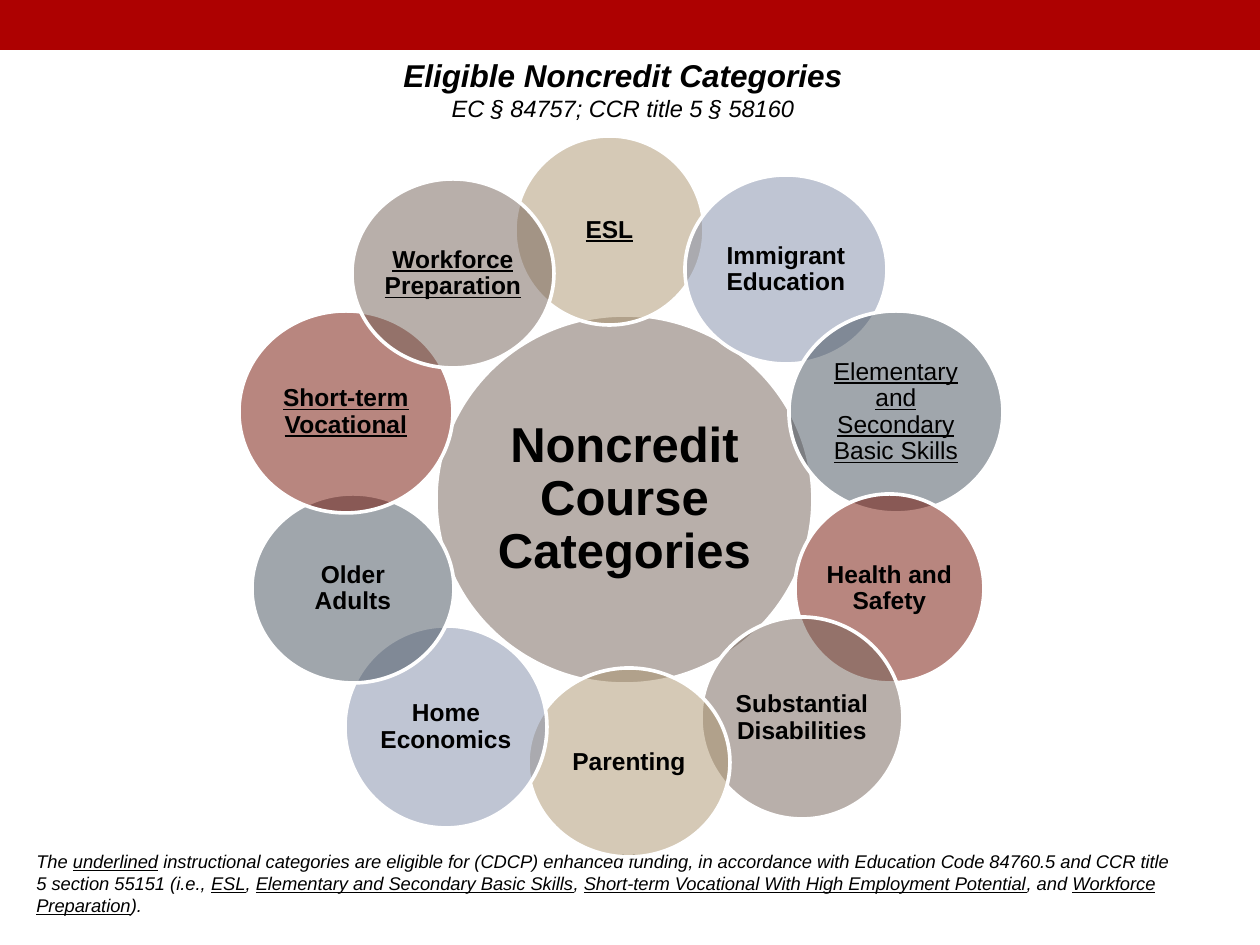
import itertools
from dataclasses import dataclass

import pptx
import pptx.dml.color
import pptx.enum.shapes
import pptx.enum.text
import pptx.oxml.ns
import pptx.util
from lxml import etree

DPI = 126
Kind = pptx.enum.shapes.MSO_SHAPE
Align = pptx.enum.text.PP_ALIGN
Anchor = pptx.enum.text.MSO_ANCHOR
Fit = pptx.enum.text.MSO_AUTO_SIZE


@dataclass(frozen=True)
class Theme:
    font: str = "Arial"
    ink: str = "000000"
    edge: str = "FFFFFF"
    band: str = "AD0101"
    hub: str = "726056"
    # Petal fills, repeated clockwise from the top
    cycle: tuple = ("AC956E", "808DA9", "424E5B", "730E00", "726056")
    alpha: int = 50
    rim: float = 2.08
    title: float = 18
    sub: float = 13.5
    core: float = 28
    label: float = 14
    note: float = 10.5


@dataclass(frozen=True)
class Disc:
    text: str  # words between underscores are underlined
    x: int
    y: int
    w: int
    h: int
    bold: bool = True


THEME = Theme()

CORE = Disc("Noncredit Course Categories", 436, 315, 377, 369)

PETALS = (
    Disc("_ESL_", 515, 136, 189, 189),
    Disc("Immigrant Education", 685, 175, 202, 189),
    Disc("_Elementary and Secondary Basic Skills_", 789, 311, 214, 202, False),
    Disc("Health and Safety", 795, 494, 189, 189),
    Disc("Substantial Disabilities", 701, 617, 202, 202),
    Disc("Parenting", 528, 668, 202, 189),
    Disc("Home Economics", 345, 626, 202, 202),
    Disc("Older Adults", 252, 494, 202, 189),
    Disc("_Short-term Vocational_", 239, 311, 214, 202),
    Disc("_Workforce_ _Preparation_", 352, 179, 202, 189),
)

NOTE = (
    "The _underlined_ instructional categories are eligible for (CDCP) "
    "enhanced funding, in accordance with Education Code 84760.5 and CCR "
    "title 5 section 55151 (i.e., _ESL_, _Elementary and Secondary Basic "
    "Skills_, _Short-term Vocational With High Employment Potential_, and "
    "_Workforce Preparation_)."
)


def px(n: int) -> pptx.util.Emu:
    return pptx.util.Emu(round(n * 914400 / DPI))


def rgb(code: str) -> pptx.dml.color.RGBColor:
    return pptx.dml.color.RGBColor.from_string(code)


def write(frame, text: str, *, size: float, bold: bool = False,
          slant: bool = False, align=Align.LEFT, lead: float = 1.0) -> None:
    """Add one paragraph; underscores switch underlining on and off."""
    para = frame.add_paragraph() if frame.text else frame.paragraphs[0]
    para.alignment = align
    para.line_spacing = lead
    for i, part in enumerate(text.split("_")):
        if not part:
            continue
        run = para.add_run()
        run.text = part
        font = run.font
        font.name, font.size = THEME.font, pptx.util.Pt(size)
        font.bold, font.italic, font.underline = bold, slant, i % 2 == 1
        font.color.rgb = rgb(THEME.ink)


def shape(slide, kind, x: int, y: int, w: int, h: int, fill: str):
    item = slide.shapes.add_shape(kind, px(x), px(y), px(w), px(h))
    item.shadow.inherit = False
    item.fill.solid()
    item.fill.fore_color.rgb = rgb(fill)
    item.line.fill.background()
    return item


def box(slide, x: int, y: int, w: int, h: int):
    frame = slide.shapes.add_textbox(px(x), px(y), px(w), px(h)).text_frame
    frame.word_wrap = True
    frame.auto_size = Fit.SHAPE_TO_FIT_TEXT
    return frame


def disc(slide, d: Disc, fill: str, size: float, inset: int) -> None:
    item = shape(slide, Kind.OVAL, d.x, d.y, d.w, d.h, fill)
    item.line.color.rgb = rgb(THEME.edge)
    item.line.width = pptx.util.Pt(THEME.rim)
    # Make the fill see-through
    qn = pptx.oxml.ns.qn
    tint = item.fill._xPr.find(qn("a:solidFill")).find(qn("a:srgbClr"))
    etree.SubElement(tint, qn("a:alpha"), val=str(THEME.alpha * 1000))
    # Label
    frame = item.text_frame
    frame.word_wrap = True
    frame.vertical_anchor = Anchor.MIDDLE
    frame.margin_left = frame.margin_right = px(inset)
    frame.margin_top = frame.margin_bottom = px(inset)
    write(frame, d.text, size=size, bold=d.bold, align=Align.CENTER, lead=0.9)


def main() -> None:
    deck = pptx.Presentation()
    deck.slide_width, deck.slide_height = px(1260), px(945)
    slide = deck.slides.add_slide(deck.slide_layouts[6])

    # Top band
    shape(slide, Kind.RECTANGLE, 0, 0, 1260, 50, THEME.band)

    # Footnote, behind the discs
    write(box(slide, 24, 844, 1173, 79), NOTE, size=THEME.note, slant=True)

    # Title
    head = box(slide, 72, 50, 1102, 79)
    write(head, "Eligible Noncredit Categories", size=THEME.title,
          bold=True, slant=True, align=Align.CENTER)
    write(head, "EC § 84757; CCR title 5 § 58160", size=THEME.sub,
          slant=True, align=Align.CENTER)

    # Hub and ring of petals
    disc(slide, CORE, THEME.hub, THEME.core, 5)
    for petal, fill in zip(PETALS, itertools.cycle(THEME.cycle)):
        disc(slide, petal, fill, THEME.label, 2)

    deck.save("out.pptx")


if __name__ == "__main__":
    main()
